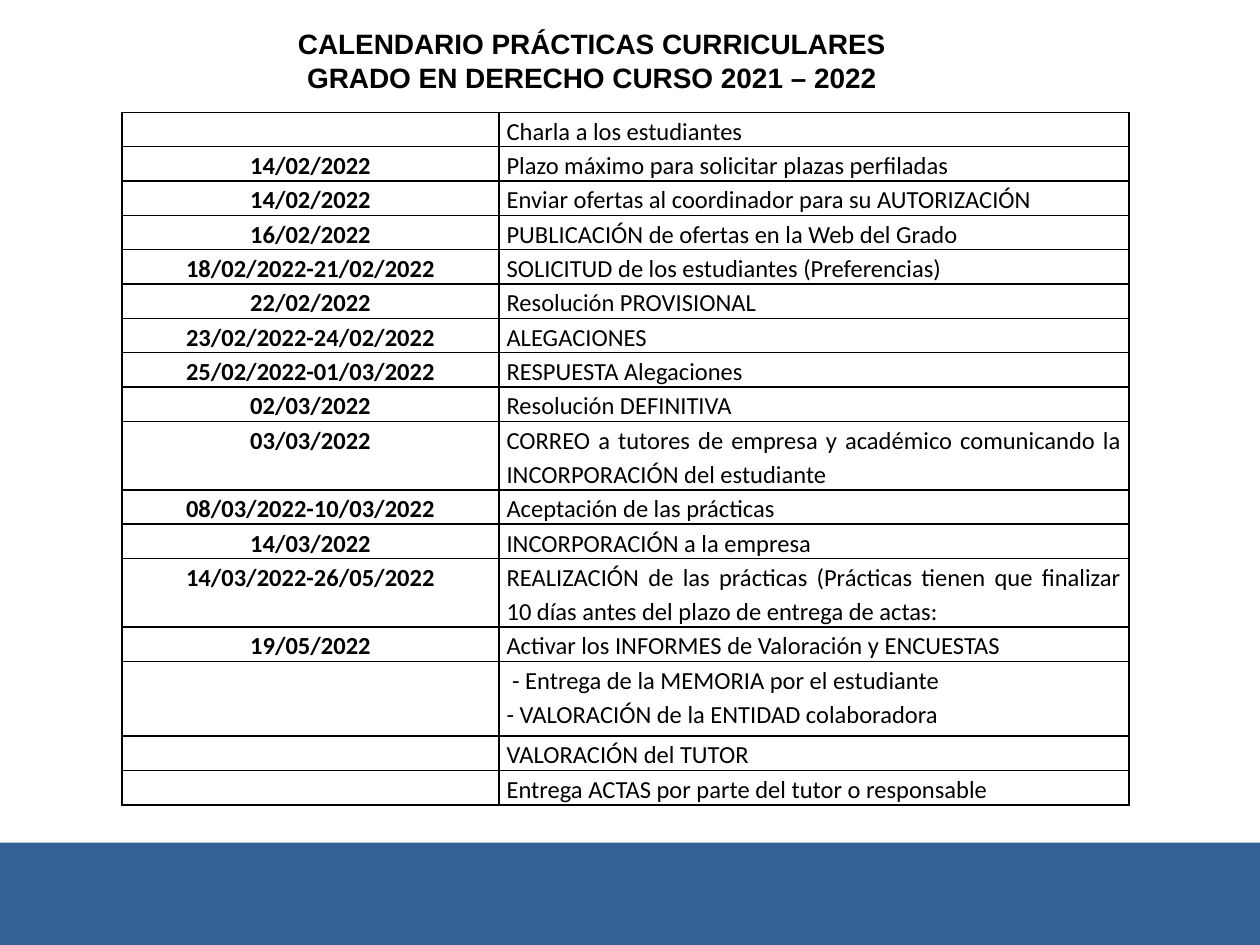
from lxml import etree
from pptx import Presentation
from pptx.dml.color import RGBColor
from pptx.enum.shapes import MSO_SHAPE
from pptx.enum.text import MSO_ANCHOR, PP_ALIGN
from pptx.oxml.ns import qn
from pptx.util import Pt

CENTER, JUSTIFY = PP_ALIGN.CENTER, PP_ALIGN.JUSTIFY
TOP, MIDDLE = MSO_ANCHOR.TOP, MSO_ANCHOR.MIDDLE
RECTANGLE = MSO_SHAPE.RECTANGLE

THEME = {
    "ink": "000000", "band": "326195",
    "title_font": "Arial", "title_size": 16,
    "table_font": "Calibri", "table_size": 14,
}
LINE_HEIGHT = 19.5


def write(frame, text, *, font, size, align, bold=False, spacing=1.0):
    """Write one paragraph per line of text; empty text keeps the type size."""
    for index, line in enumerate(text.split("\n")):
        paragraph = frame.paragraphs[0] if index == 0 else frame.add_paragraph()
        paragraph.alignment = align
        paragraph.line_spacing = spacing
        paragraph.space_before = Pt(0)
        if not line:
            etree.SubElement(paragraph._p, qn("a:endParaRPr"), sz=str(size * 100))
            continue
        run = paragraph.add_run()
        run.text = line
        run.font.name = font
        run.font.size = Pt(size)
        run.font.bold = bold
        run.font.color.rgb = RGBColor.from_string(THEME["ink"])


def add_borders(cell):
    """Draw a 1 pt line on all four sides, ahead of the cell's fill."""
    properties = cell._tc.get_or_add_tcPr()
    for position, side in enumerate(("a:lnL", "a:lnR", "a:lnT", "a:lnB")):
        line = etree.Element(qn(side), w=str(Pt(1)))
        fill = etree.SubElement(line, qn("a:solidFill"))
        etree.SubElement(fill, qn("a:srgbClr"), val=THEME["ink"])
        properties.insert(position, line)


prs = Presentation()
prs.slide_width, prs.slide_height = Pt(720), Pt(540)
slide = prs.slides.add_slide(prs.slide_layouts[5])

# Bottom band
band = slide.shapes.add_shape(RECTANGLE, Pt(0), Pt(481.5), Pt(720), Pt(58.5))
band.shadow.inherit = False
band.fill.solid()
band.fill.fore_color.rgb = RGBColor.from_string(THEME["band"])
band.line.fill.background()

# Title
title = slide.shapes.title
title.left, title.top, title.width, title.height = Pt(46), Pt(11.5), Pt(584.5), Pt(46)
title.text_frame.word_wrap = True
title.text_frame.vertical_anchor = MIDDLE
write(title.text_frame,
      "CALENDARIO PRÁCTICAS CURRICULARES\nGRADO EN DERECHO CURSO 2021 – 2022",
      font=THEME["title_font"], size=THEME["title_size"], align=CENTER, bold=True)

# Calendar: date, milestone, row height
ONE, TWO = LINE_HEIGHT, 2 * LINE_HEIGHT
calendar = [
    ("", "Charla a los estudiantes", ONE),
    ("14/02/2022", "Plazo máximo para solicitar plazas perfiladas", ONE),
    ("14/02/2022", "Enviar ofertas al coordinador para su AUTORIZACIÓN", ONE),
    ("16/02/2022", "PUBLICACIÓN de ofertas en la Web del Grado", ONE),
    ("18/02/2022-21/02/2022", "SOLICITUD de los estudiantes (Preferencias)", ONE),
    ("22/02/2022", "Resolución PROVISIONAL", ONE),
    ("23/02/2022-24/02/2022", "ALEGACIONES", ONE),
    ("25/02/2022-01/03/2022", "RESPUESTA Alegaciones", ONE),
    ("02/03/2022", "Resolución DEFINITIVA", ONE),
    ("03/03/2022", "CORREO a tutores de empresa y académico comunicando la "
                   "INCORPORACIÓN del estudiante", TWO),
    ("08/03/2022-10/03/2022", "Aceptación de las prácticas", ONE),
    ("14/03/2022", "INCORPORACIÓN a la empresa", ONE),
    ("14/03/2022-26/05/2022", "REALIZACIÓN de las prácticas (Prácticas tienen que "
                              "finalizar 10 días antes del plazo de entrega de actas:", TWO),
    ("19/05/2022", "Activar los INFORMES de Valoración y ENCUESTAS", ONE),
    ("", " - Entrega de la MEMORIA por el estudiante\n"
         "- VALORACIÓN de la ENTIDAD colaboradora", 42.7),
    ("", "VALORACIÓN del TUTOR", ONE),
    ("", "Entrega ACTAS por parte del tutor o responsable", ONE),
]
total_height = sum(height for _, _, height in calendar)
table = slide.shapes.add_table(len(calendar), 2, Pt(69.8), Pt(64.2),
                               Pt(575.3), Pt(total_height)).table
table.first_row = table.horz_banding = False
table.columns[0].width, table.columns[1].width = Pt(215.3), Pt(360)

for row, (date, milestone, height) in zip(table.rows, calendar):
    row.height = Pt(height)
    for cell, text, align, bold in zip(row.cells, (date, milestone),
                                       (CENTER, JUSTIFY), (True, False)):
        cell.margin_left = cell.margin_right = Pt(4.4)
        cell.margin_top = cell.margin_bottom = Pt(0)
        cell.vertical_anchor = TOP
        cell.fill.background()
        add_borders(cell)
        write(cell.text_frame, text, font=THEME["table_font"],
              size=THEME["table_size"], align=align, bold=bold, spacing=1.15)

prs.save("out.pptx")
